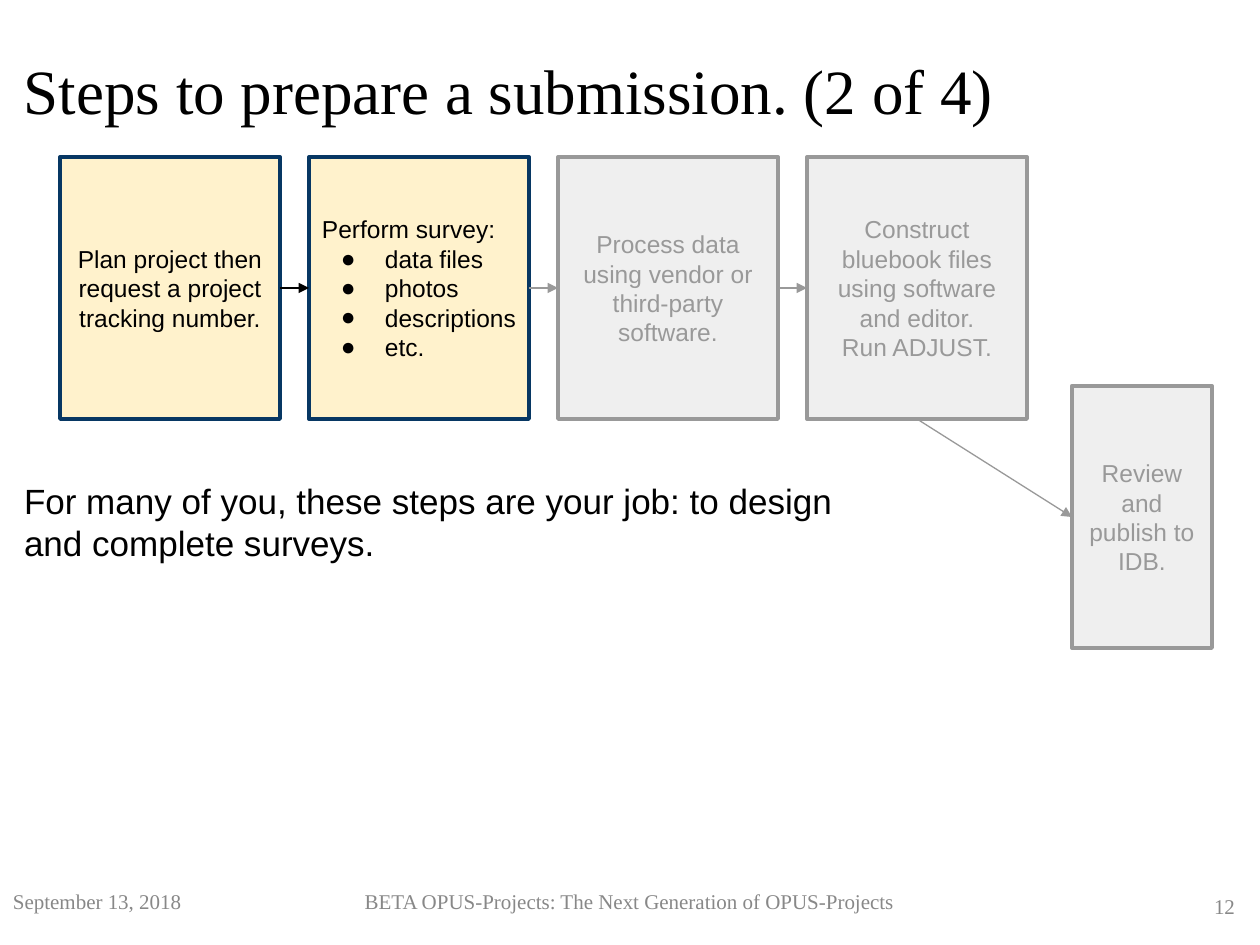
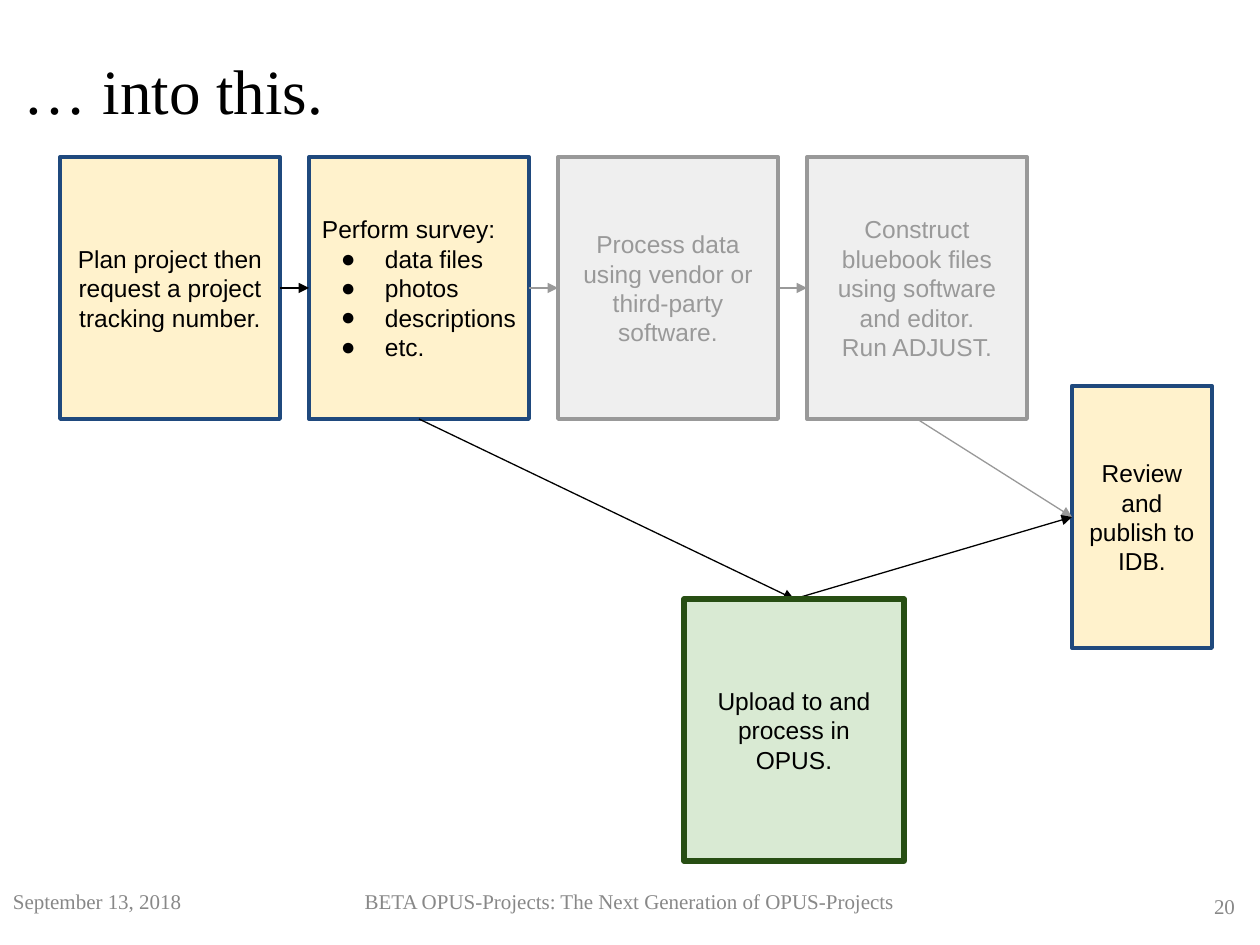
"""Build two slides that show the survey submission steps as a flow chart."""
from lxml.etree import SubElement
from pptx import Presentation
from pptx.dml.color import RGBColor
from pptx.enum.shapes import MSO_CONNECTOR as Line, MSO_SHAPE as Form
from pptx.enum.text import MSO_ANCHOR as Anchor, PP_ALIGN as Align
from pptx.oxml.ns import qn
from pptx.util import Pt

PX = 914400 / 126
HUES = {
    "black": "000000", "grey": "999999", "foot": "888888", "pale": "EFEFEF",
    "cream": "FFF2CC", "navy": "073763", "blue": "1F497D",
    "mint": "D9EAD3", "green": "274E13",
}
SANS, SERIF = "Arial", "Times New Roman"
TOP, BOTTOM, LEFT, RIGHT = 0, 2, 1, 3
STEP, WIDE, HIGH = 249, 220, 262

BOXES = {
    "plan": (60, 157, WIDE, ["Plan project then request a project tracking number."]),
    "survey": (60 + STEP, 157, WIDE,
               ["Perform survey:", "data files", "photos", "descriptions", "etc."]),
    "process": (60 + 2 * STEP, 157, WIDE,
                ["Process data using vendor or third-party software."]),
    "build": (60 + 3 * STEP, 157, WIDE,
              ["Construct bluebook files using software and editor.", "Run ADJUST."]),
    "review": (1072, 386, 140, ["Review and publish to IDB."]),
    "upload": (684, 599, WIDE, ["Upload to and process in OPUS."]),
}
LINKS = [
    ("plan", RIGHT, "survey", LEFT, "black"),
    ("survey", RIGHT, "process", LEFT, "grey"),
    ("process", RIGHT, "build", LEFT, "grey"),
    ("build", BOTTOM, "review", LEFT, "grey"),
    ("survey", BOTTOM, "upload", TOP, "black"),
    ("upload", TOP, "review", LEFT, "black"),
]
OFF = ("pale", "grey", 2.25, "grey")
NAVY = ("cream", "navy", 2.25, "black")
BLUE = ("cream", "blue", 2.25, "black")
MINT = ("mint", "green", 3, "black")
SLIDES = [
    ("Steps to prepare a submission. (2 of 4)", "12",
     {"plan": NAVY, "survey": NAVY, "process": OFF, "build": OFF, "review": OFF},
     "For many of you, these steps are your job: to design and complete surveys."),
    ("… into this.", "20",
     {"plan": BLUE, "survey": BLUE, "process": OFF, "build": OFF, "review": BLUE,
      "upload": MINT}, None),
]


def px(*nums):
    """Turn px into EMU."""
    return [round(n * PX) for n in nums]


def write(shape, lines, size, face, hue, align, pad=13, anchor=Anchor.TOP):
    """Fill a shape with styled paragraphs."""
    frame = shape.text_frame
    frame.word_wrap = True
    frame.vertical_anchor = anchor
    frame.margin_left, frame.margin_right = px(13, 13)
    frame.margin_top, frame.margin_bottom = px(pad, pad)
    frame.text = "\n".join(lines)
    for para in frame.paragraphs:
        para.alignment = align
        font = para.runs[0].font
        font.size, font.name = Pt(size), face
        font.color.rgb = RGBColor.from_string(HUES[hue])


deck = Presentation()
deck.slide_width, deck.slide_height = px(1260, 945)

for title, page, looks, note in SLIDES:
    shapes = deck.slides.add_slide(deck.slide_layouts[6]).shapes

    nodes = {}
    for name, (fill, edge, width, ink) in looks.items():
        left, top, wide, lines = BOXES[name]
        box = shapes.add_shape(Form.RECTANGLE, *px(left, top, wide, HIGH))
        box.shadow.inherit = False
        box.fill.solid()
        box.fill.fore_color.rgb = RGBColor.from_string(HUES[fill])
        box.line.color.rgb = RGBColor.from_string(HUES[edge])
        box.line.width = Pt(width)
        align = Align.LEFT if name == "survey" else Align.CENTER
        write(box, lines, 14, SANS, ink, align, anchor=Anchor.MIDDLE)
        nodes[name] = box

    frame = nodes["survey"].text_frame
    frame.margin_right, indent, hang = px(6, 63, -44)
    for para in frame.paragraphs[1:]:
        props = para._p.get_or_add_pPr()
        props.set("marL", str(indent))
        props.set("indent", str(hang))
        tint = SubElement(props, qn("a:buClr"))
        SubElement(tint, qn("a:srgbClr"), val=HUES["black"])
        SubElement(props, qn("a:buFont"), typeface=SANS)
        SubElement(props, qn("a:buChar"), char="●")

    for start, out, end, into, hue in LINKS:
        if start not in nodes or end not in nodes:
            continue
        link = shapes.add_connector(Line.STRAIGHT, 0, 0, 0, 0)
        link.begin_connect(nodes[start], out)
        link.end_connect(nodes[end], into)
        link.line.color.rgb = RGBColor.from_string(HUES[hue])
        link.line.width = Pt(0.75)
        SubElement(link.line._get_or_add_ln(), qn("a:tailEnd"), type="triangle")
        SubElement(link._element.spPr, qn("a:effectLst"))

    if "upload" in nodes:
        node = nodes["upload"]._element
        node.getparent().append(node)

    texts = [
        ((11, 46, 1237, 110), title, 36, SERIF, "black", Align.LEFT, 6, Anchor.TOP),
        ((0, 876, 199, 60), "September 13, 2018", 12, SERIF, "foot", Align.LEFT,
         13, Anchor.TOP),
        ((1060, 876, 188, 60), page, 12, SERIF, "foot", Align.RIGHT, 6, Anchor.MIDDLE),
        ((199, 876, 861, 60), "BETA OPUS-Projects: The Next Generation of OPUS-Projects",
         12, SERIF, "foot", Align.CENTER, 13, Anchor.TOP),
    ]
    if note:
        texts.append(((11, 467, 851, 378), note, 20, SANS, "black", Align.LEFT,
                      13, Anchor.TOP))
    for area, words, *style in texts:
        write(shapes.add_textbox(*px(*area)), [words], *style)

deck.save("out.pptx")
